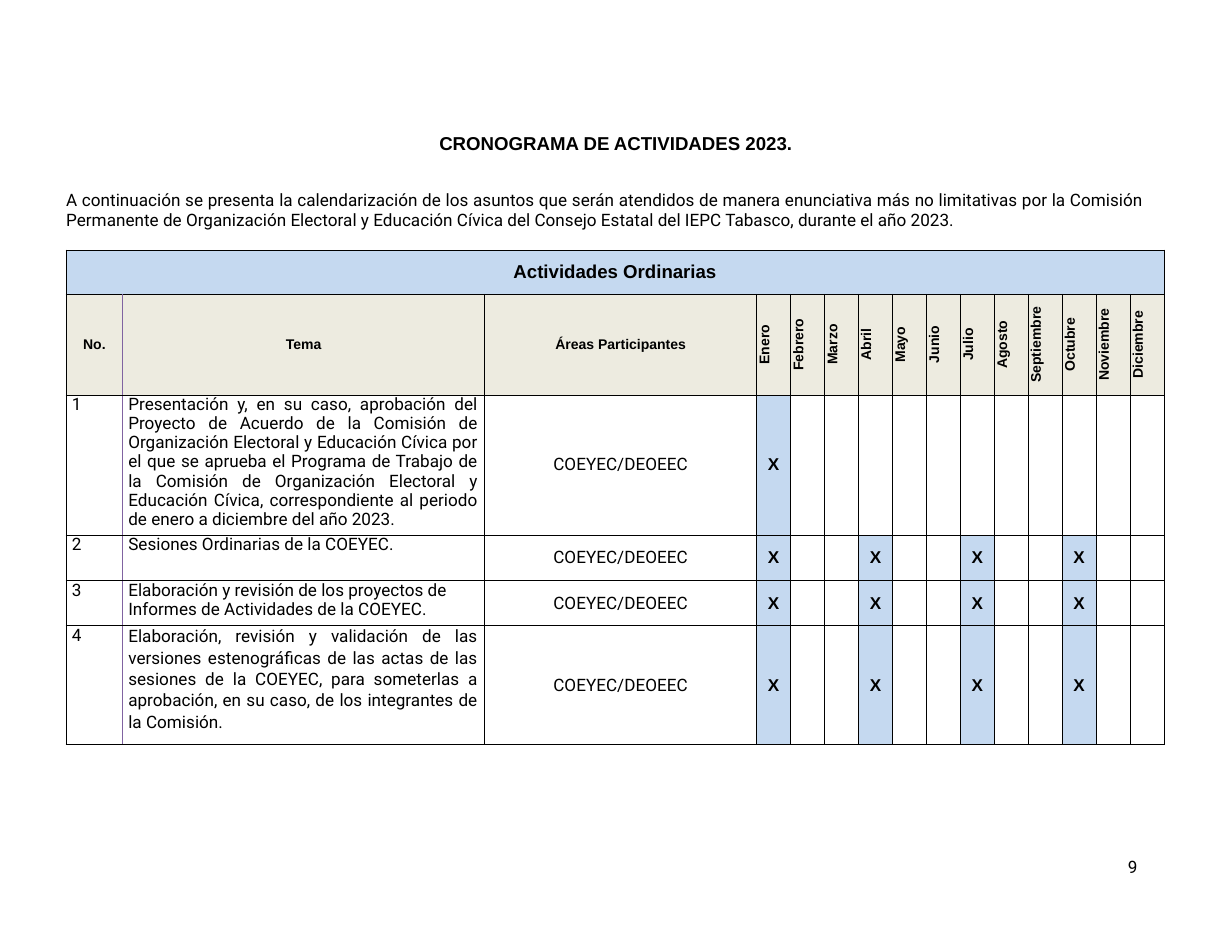
from lxml import etree
from pptx import Presentation
from pptx.dml.color import RGBColor
from pptx.enum import text
from pptx.oxml import ns
from pptx.util import Cm, Pt

BLACK = RGBColor(0x00, 0x00, 0x00)
BLUE = RGBColor(0xC5, 0xD9, 0xF0)
BEIGE = RGBColor(0xED, 0xEB, 0xE0)
PURPLE = RGBColor(0x80, 0x63, 0xA1)

CENTER = text.PP_ALIGN.CENTER
LEFT = text.PP_ALIGN.LEFT
JUSTIFY = text.PP_ALIGN.JUSTIFY
TOP = text.MSO_ANCHOR.TOP
MIDDLE = text.MSO_ANCHOR.MIDDLE

MONTHS = ["Enero", "Febrero", "Marzo", "Abril", "Mayo", "Junio", "Julio",
          "Agosto", "Septiembre", "Octubre", "Noviembre", "Diciembre"]
HEADINGS = ["No.", "Tema", "Áreas Participantes"]
AREA = "COEYEC/DEOEEC"
QUARTERLY = ["Enero", "Abril", "Julio", "Octubre"]

ACTIVITIES = [
    ("Presentación y, en su caso, aprobación del Proyecto de Acuerdo de la "
     "Comisión de Organización Electoral y Educación Cívica por el que se "
     "aprueba el Programa de Trabajo de la Comisión de Organización Electoral "
     "y Educación Cívica, correspondiente al periodo de enero a diciembre del "
     "año 2023.", JUSTIFY, 0.96, ["Enero"]),
    ("Sesiones Ordinarias de la COEYEC.", LEFT, Pt(12.8), QUARTERLY),
    ("Elaboración y revisión de los proyectos de Informes de Actividades de "
     "la COEYEC.", LEFT, Pt(12.6), QUARTERLY),
    ("Elaboración, revisión y validación de las versiones estenográficas de "
     "las actas de las sesiones de la COEYEC, para someterlas a aprobación, "
     "en su caso, de los integrantes de la Comisión.",
     JUSTIFY, Pt(13.7), QUARTERLY),
]

INTRO = ("A continuación se presenta la calendarización de los asuntos que "
         "serán atendidos de manera enunciativa más no limitativas por la "
         "Comisión Permanente de Organización Electoral y Educación Cívica "
         "del Consejo Estatal del IEPC Tabasco, durante el año 2023.")

COLUMN_WIDTHS = [1.28, 8.21, 6.17] + [0.77] * len(MONTHS)
ROW_HEIGHTS = [1.0, 2.29, 3.17, 1.04, 1.02, 2.7]


def write(frame, words, size, font="Roboto", bold=False, align=LEFT, spacing=1.0):
    paragraph = frame.paragraphs[0]
    paragraph.alignment = align
    paragraph.line_spacing = spacing
    paragraph.space_before = Pt(0)
    run = paragraph.add_run()
    run.text = words
    run.font.name = font
    run.font.size = Pt(size)
    run.font.bold = bold
    run.font.color.rgb = BLACK


def prepare(shape, left, top, width, height):
    shape.left, shape.top = Cm(left), Cm(top)
    shape.width, shape.height = Cm(width), Cm(height)
    frame = shape.text_frame
    frame.margin_left = frame.margin_right = 0
    frame.margin_top = frame.margin_bottom = 0
    frame.word_wrap = True
    frame.auto_size = text.MSO_AUTO_SIZE.NONE
    frame.vertical_anchor = TOP
    return frame


def remove_bullet(paragraph):
    properties = paragraph._p.get_or_add_pPr()
    properties.set("marL", "0")
    properties.set("indent", "0")
    etree.SubElement(properties, ns.qn("a:buNone"))


def add_border(cell, side, color, width):
    line = etree.SubElement(cell._tc.get_or_add_tcPr(), ns.qn(f"a:ln{side}"),
                            w=str(Pt(width)))
    fill = etree.SubElement(line, ns.qn("a:solidFill"))
    etree.SubElement(fill, ns.qn("a:srgbClr"), val=str(color))


def format_cell(cell, row, column):
    cell.margin_left = cell.margin_right = 0
    cell.margin_top = cell.margin_bottom = 0
    last = len(COLUMN_WIDTHS) - 1
    purple_side = {0: "R", 1: "L"}.get(column) if row else None
    outer = {"L": column == 0, "R": column == last, "T": row == 0, "B": False}
    for side, on_edge in outer.items():
        if side == purple_side:
            add_border(cell, side, PURPLE, 1)
        else:
            add_border(cell, side, BLACK, 0.75 if on_edge else 0.5)
    cell.fill.background()


def paint(cell, color):
    cell.fill.solid()
    cell.fill.fore_color.rgb = color


def write_cell(cell, words, size, anchor=MIDDLE, **style):
    cell.vertical_anchor = anchor
    write(cell.text_frame, words, size, **style)


def fill_headings(table):
    banner = table.cell(0, 0)
    banner.merge(table.cell(0, len(COLUMN_WIDTHS) - 1))
    paint(banner, BLUE)
    write_cell(banner, "Actividades Ordinarias", 12, font="Arial", bold=True,
               align=CENTER)
    for column, heading in enumerate(HEADINGS + MONTHS):
        cell = table.cell(1, column)
        paint(cell, BEIGE)
        if heading in MONTHS:
            cell._tc.get_or_add_tcPr().set("vert", "vert270")
        write_cell(cell, heading, 9, font="Arial", bold=True, align=CENTER)


def fill_activity(table, number, topic, align, spacing, months):
    row = number + 1
    number_cell, topic_cell = table.cell(row, 0), table.cell(row, 1)
    number_cell.margin_left = topic_cell.margin_left = Cm(0.13)
    topic_cell.margin_right = Cm(0.15)
    write_cell(number_cell, str(number), 11, anchor=TOP)
    write_cell(topic_cell, topic, 11, anchor=TOP, align=align, spacing=spacing)
    write_cell(table.cell(row, 2), AREA, 11, align=CENTER)
    for month in months:
        cell = table.cell(row, len(HEADINGS) + MONTHS.index(month))
        paint(cell, BLUE)
        write_cell(cell, "X", 11, font="Arial", bold=True, align=CENTER)


def add_schedule(slide):
    table = slide.shapes.add_table(
        len(ROW_HEIGHTS), len(COLUMN_WIDTHS), Cm(1.5), Cm(5.67),
        Cm(sum(COLUMN_WIDTHS)), Cm(sum(ROW_HEIGHTS))).table
    table.first_row = table.horz_banding = False
    for column, width in zip(table.columns, COLUMN_WIDTHS):
        column.width = Cm(width)
    for r, height in enumerate(ROW_HEIGHTS):
        table.rows[r].height = Cm(height)
        for c in range(len(COLUMN_WIDTHS)):
            format_cell(table.cell(r, c), r, c)
    fill_headings(table)
    for number, activity in enumerate(ACTIVITIES, 1):
        fill_activity(table, number, *activity)


def main():
    deck = Presentation()
    deck.slide_width, deck.slide_height = Cm(27.94), Cm(21.59)
    slide = deck.slides.add_slide(deck.slide_layouts[1])

    heading = prepare(slide.shapes.title, 1.5, 3.0, 24.94, 0.6)
    write(heading, "CRONOGRAMA DE ACTIVIDADES 2023.", 12, font="Arial",
          bold=True, align=CENTER)

    intro = prepare(slide.placeholders[1], 1.5, 4.32, 24.46, 1)
    remove_bullet(intro.paragraphs[0])
    write(intro, INTRO, 11, align=JUSTIFY, spacing=Pt(12.6))

    add_schedule(slide)

    page_box = slide.shapes.add_textbox(0, 0, 0, 0)
    page_number = prepare(page_box, 25.58, 19.42, 0.5, 0.5)
    write(page_number, "9", 11)

    deck.save("out.pptx")


if __name__ == "__main__":
    main()
